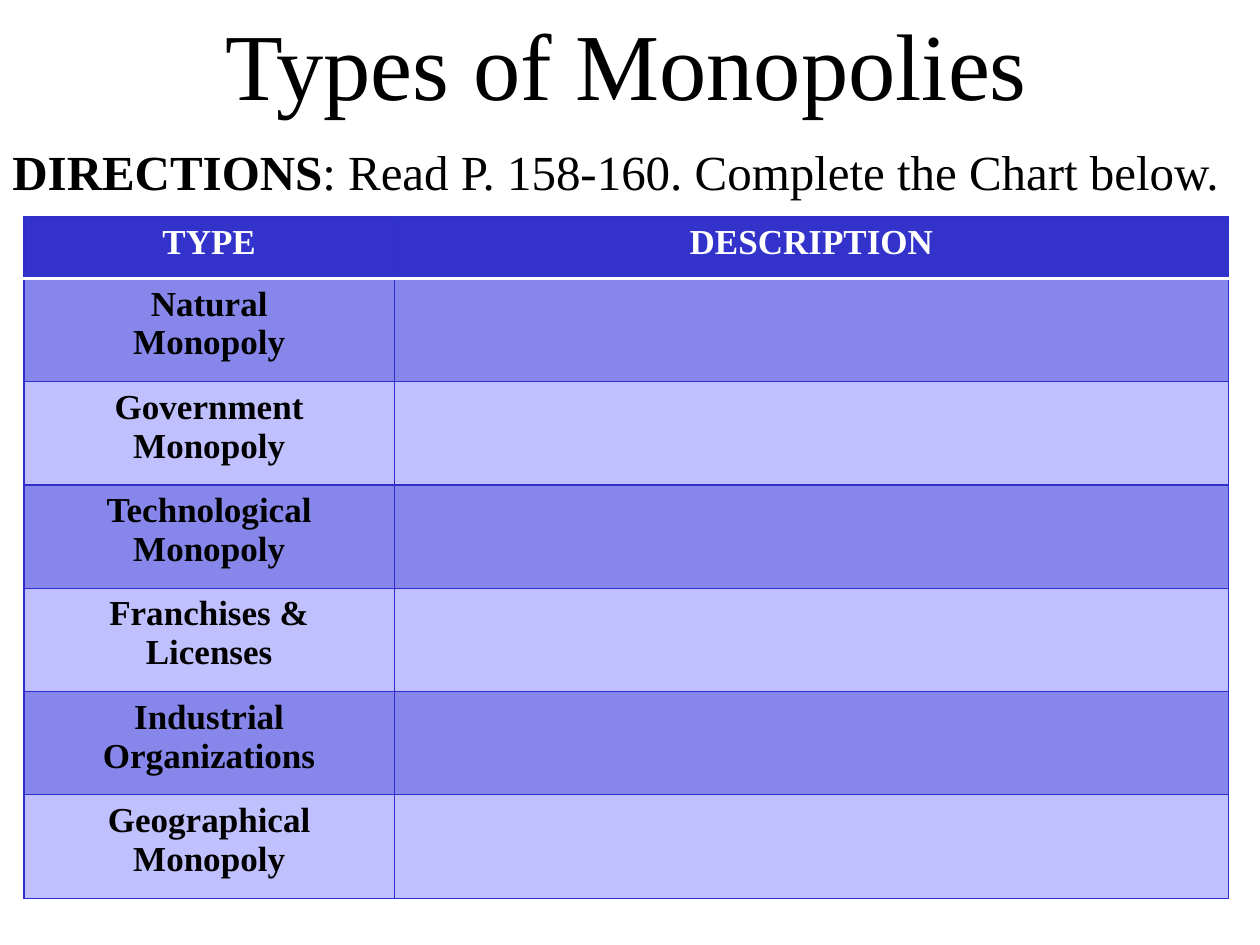
from dataclasses import dataclass

from lxml.etree import SubElement
from pptx import Presentation
from pptx.dml.color import RGBColor
from pptx.enum.text import MSO_ANCHOR as Anchor, PP_ALIGN as Align
from pptx.oxml.ns import qn
from pptx.util import Inches, Pt


@dataclass(frozen=True)
class Theme:
    font: str = "Times New Roman"
    title_size: int = 54
    directions_size: int = 28
    table_size: int = 20
    ink: str = "000000"
    white: str = "FFFFFF"
    header: str = "3333CC"
    dark_band: str = "8787EB"
    light_band: str = "C0C0FF"
    border: str = "2E2ECB"


THEME = Theme()
HEADINGS = ("TYPE", "DESCRIPTION")
MONOPOLY_TYPES = (
    ("Natural", "Monopoly"),
    ("Government", "Monopoly"),
    ("Technological", "Monopoly"),
    ("Franchises &", "Licenses"),
    ("Industrial", "Organizations"),
    ("Geographical", "Monopoly"),
)
COLUMN_WIDTHS = (2.94, 6.62)
HEADER_HEIGHT, ROW_HEIGHT = 0.49, 0.82


def add_span(para, text, size, color=THEME.ink, bold=False):
    span = para.add_run()
    span.text = text
    formats = {"name": THEME.font, "size": Pt(size), "bold": bold}
    for name, value in formats.items():
        setattr(span.font, name, value)
    span.font.color.rgb = RGBColor.from_string(color)


def add_text_box(page, place, spans, size, align, anchor, space_before=0):
    box = page.shapes.add_textbox(*map(Inches, place))
    frame = box.text_frame
    frame.word_wrap = True
    frame.vertical_anchor = anchor
    para = frame.paragraphs[0]
    para.alignment = align
    para.space_before = Pt(space_before)
    for text, bold in spans:
        add_span(para, text, size, bold=bold)


def set_borders(cell, **special):
    """Draw the four cell sides; special maps a side to (color, points)."""
    properties = cell._tc.get_or_add_tcPr()
    for position, side in enumerate("LRTB"):
        color, points = special.get(side, (THEME.border, 0.75))
        line = SubElement(properties, qn(f"a:ln{side}"), w=str(Pt(points)))
        fill = SubElement(line, qn("a:solidFill"))
        SubElement(fill, qn("a:srgbClr"), val=color)
        properties.insert(position, line)  # borders come before the fill


def fill_cell(cell, lines, fill, color, **borders):
    cell.fill.solid()
    cell.fill.fore_color.rgb = RGBColor.from_string(fill)
    set_borders(cell, **borders)
    frame = cell.text_frame
    for index, text in enumerate(lines):
        para = frame.add_paragraph() if index else frame.paragraphs[0]
        para.alignment = Align.CENTER
        add_span(para, text, THEME.table_size, color, bold=True)


def add_monopoly_table(page, left, top):
    heights = [HEADER_HEIGHT] + [ROW_HEIGHT] * len(MONOPOLY_TYPES)
    table = page.shapes.add_table(
        len(heights), len(COLUMN_WIDTHS), Inches(left), Inches(top),
        Inches(sum(COLUMN_WIDTHS)), Inches(sum(heights))).table
    for column, width in zip(table.columns, COLUMN_WIDTHS):
        column.width = Inches(width)
    for row, height in zip(table.rows, heights):
        row.height = Inches(height)

    # Header row, with a white rule under it
    rule = (THEME.white, 2)
    for index, heading in enumerate(HEADINGS):
        fill_cell(table.cell(0, index), [heading], THEME.header, THEME.white, B=rule)

    # Banded rows, description left open
    for row, lines in enumerate(MONOPOLY_TYPES, start=1):
        band = THEME.dark_band if row % 2 else THEME.light_band
        borders = {"T": rule} if row == 1 else {}
        for index, content in enumerate((lines, ())):
            fill_cell(table.cell(row, index), content, band, THEME.ink, **borders)


def main():
    deck = Presentation()
    deck.slide_width, deck.slide_height = Inches(10), Inches(7.5)
    page = deck.slides.add_slide(deck.slide_layouts[6])

    # Title and directions
    add_text_box(page, (0.72, 0, 8.5, 1), [("Types of Monopolies", False)],
                 THEME.title_size, Align.CENTER, Anchor.MIDDLE)
    add_text_box(page, (0, 1.07, 10, 0.58),
                 [("DIRECTIONS", True),
                  (": Read P. 158-160. Complete the Chart below.", False)],
                 THEME.directions_size, Align.LEFT, Anchor.TOP, space_before=4)

    # Chart to complete
    add_monopoly_table(page, 0.19, 1.72)
    deck.save("out.pptx")


if __name__ == "__main__":
    main()
